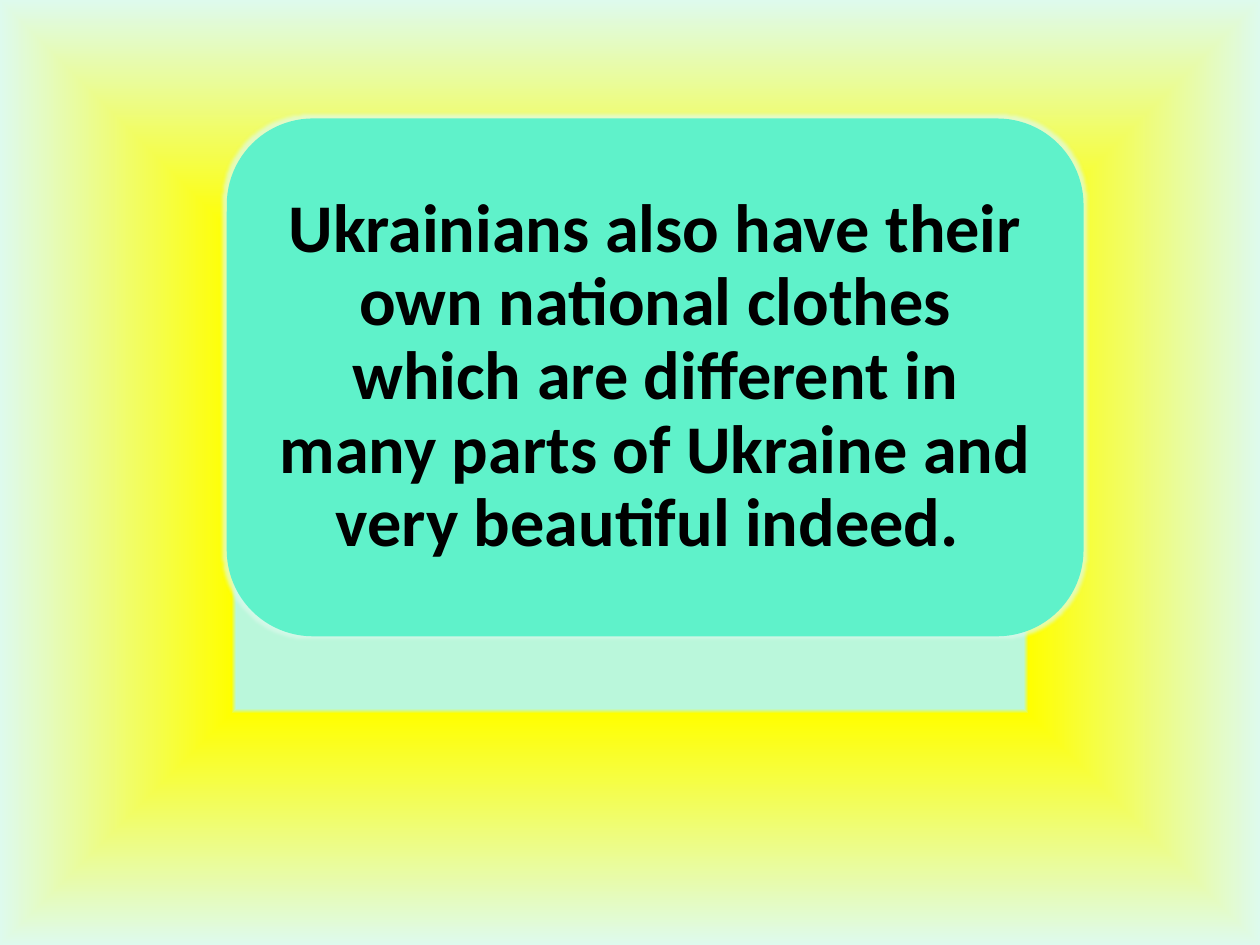
from lxml import etree
from pptx import Presentation
from pptx.dml.color import RGBColor
from pptx.enum.shapes import MSO_SHAPE
from pptx.enum.text import MSO_ANCHOR, PP_ALIGN
from pptx.oxml import parse_xml
from pptx.oxml.ns import nsdecls, qn
from pptx.util import Inches, Pt

ROUNDED = MSO_SHAPE.ROUNDED_RECTANGLE
MIDDLE = MSO_ANCHOR.MIDDLE
CENTER = PP_ALIGN.CENTER

MINT = RGBColor(0xBA, 0xF7, 0xDB)
YELLOW = RGBColor(0xFF, 0xFF, 0x00)
PALE_MINT = RGBColor(0xDE, 0xFA, 0xED)
TURQUOISE = RGBColor(0x5F, 0xF2, 0xCA)
BLACK = RGBColor(0x00, 0x00, 0x00)

BACKGROUND_STOPS = [(50, MINT), (51, YELLOW), (51, YELLOW), (100, PALE_MINT)]
STATEMENT = (
    "Ukrainians also have their own national clothes which are different "
    "in many parts of Ukraine and very beautiful indeed. "
)


def paint_background(slide, color_stops):
    """Fill the background with a gradient that runs from the centre to the edges."""
    slide.background.fill.gradient()
    old_gradient = next(slide.background._cSld.iter(qn("a:gradFill")))
    stops = "".join(
        f'<a:gs pos="{percent * 1000}"><a:srgbClr val="{color}"/></a:gs>'
        for percent, color in color_stops
    )
    gradient = parse_xml(
        f'<a:gradFill {nsdecls("a")} rotWithShape="1"><a:gsLst>{stops}</a:gsLst>'
        '<a:path path="shape"><a:fillToRect l="50000" t="50000" r="50000" b="50000"/>'
        "</a:path></a:gradFill>"
    )
    old_gradient.getparent().replace(old_gradient, gradient)


def add_glow(shape, radius, color, opacity):
    effects = shape._element.spPr.find(qn("a:effectLst"))
    glow = etree.SubElement(effects, qn("a:glow"), rad=str(radius))
    tint = etree.SubElement(glow, qn("a:srgbClr"), val=str(color))
    etree.SubElement(tint, qn("a:alpha"), val=str(opacity * 1000))


def add_statement_card(slide, left, top, width, height, statement):
    card = slide.shapes.add_shape(ROUNDED, left, top, width, height)
    card.shadow.inherit = False
    card.fill.solid()
    card.fill.fore_color.rgb = TURQUOISE
    card.line.fill.background()
    add_glow(card, Inches(0.05), PALE_MINT, 70)

    frame = card.text_frame
    frame.word_wrap = True
    frame.vertical_anchor = MIDDLE
    frame.margin_left = frame.margin_right = Inches(0.16)
    frame.margin_top = frame.margin_bottom = Inches(0.08)

    paragraph = frame.paragraphs[0]
    paragraph.text = statement
    paragraph.alignment = CENTER
    paragraph.line_spacing = 0.9
    paragraph.font.name = "Calibri"
    paragraph.font.size = Pt(39)
    paragraph.font.bold = True
    paragraph.font.color.rgb = BLACK


def main():
    presentation = Presentation()
    presentation.slide_width = Inches(10)
    presentation.slide_height = Inches(7.5)
    slide = presentation.slides.add_slide(presentation.slide_layouts[6])
    paint_background(slide, BACKGROUND_STOPS)
    add_statement_card(
        slide, Inches(1.8), Inches(0.94), Inches(6.8), Inches(4.11), STATEMENT
    )
    presentation.save("out.pptx")


if __name__ == "__main__":
    main()
